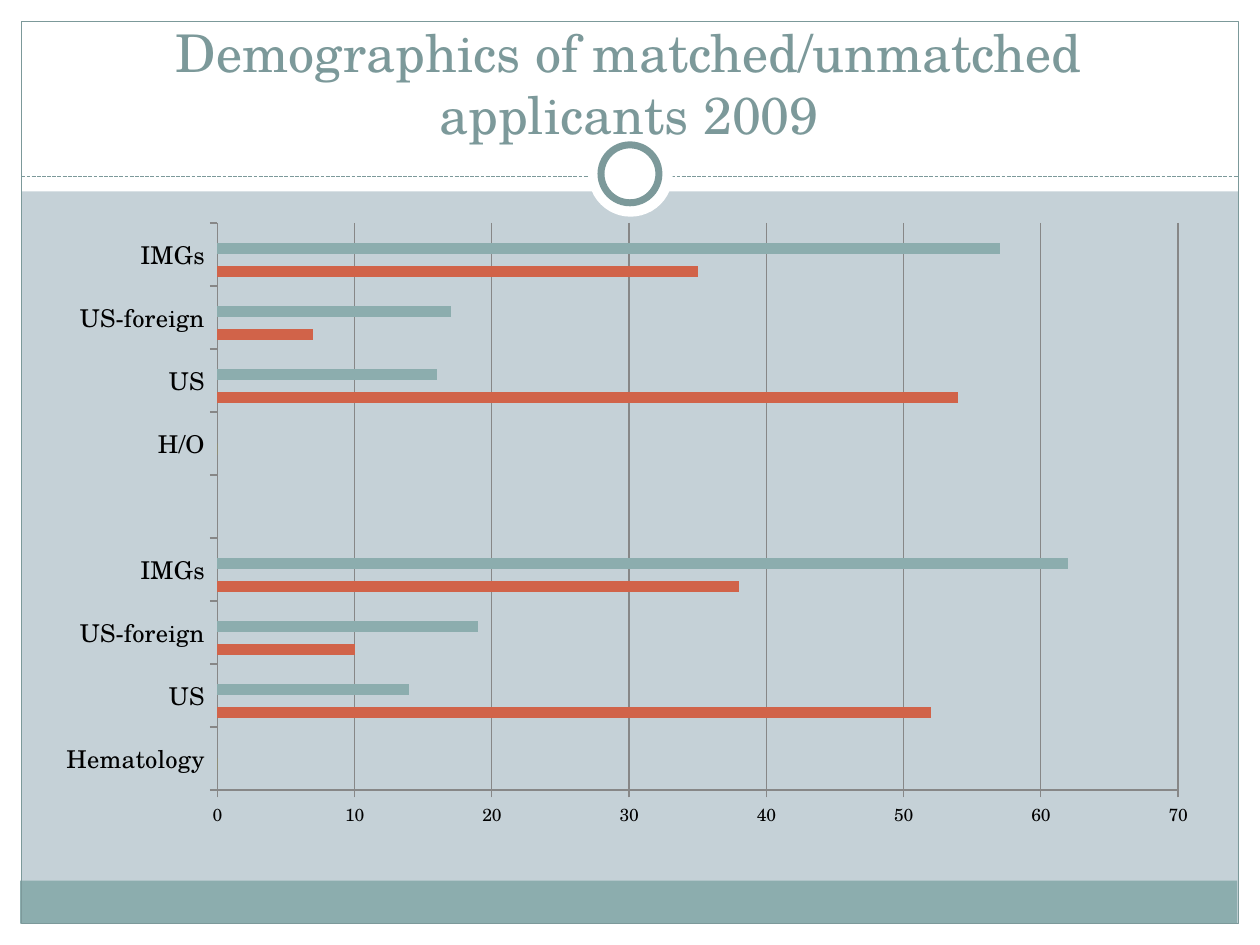
"""Build a slide with a bar chart of matched and unmatched applicants in 2009."""
from typing import NamedTuple, Optional

from lxml import etree
from pptx import Presentation
from pptx.chart.data import CategoryChartData
from pptx.dml.color import RGBColor
from pptx.enum.chart import XL_CHART_TYPE, XL_TICK_MARK
from pptx.enum.dml import MSO_LINE
from pptx.enum.shapes import MSO_CONNECTOR, MSO_SHAPE
from pptx.enum.text import MSO_ANCHOR, MSO_AUTO_SIZE, PP_ALIGN
from pptx.oxml import parse_xml
from pptx.oxml.ns import nsdecls, qn
from pptx.util import Inches, Pt

RECT, OVAL = MSO_SHAPE.RECTANGLE, MSO_SHAPE.OVAL
BAR, OUTSIDE = XL_CHART_TYPE.BAR_CLUSTERED, XL_TICK_MARK.OUTSIDE
STRAIGHT, DASH = MSO_CONNECTOR.STRAIGHT, MSO_LINE.SQUARE_DOT
CENTER, BOTTOM = PP_ALIGN.CENTER, MSO_ANCHOR.BOTTOM
NO_AUTOFIT = MSO_AUTO_SIZE.NONE
FONT = "TeX Gyre Schola"
WHITE, BLACK, SAGE, TEAL = "FFFFFF", "000000", "7C999A", "8CADAE"
BACKDROP, GRID = "C5D1D7", "878787"


class Panel(NamedTuple):
    left: float
    top: float
    width: float
    height: float
    fill: Optional[str] = WHITE
    line: Optional[str] = None
    weight: float = 0.75
    kind: int = RECT


class Series(NamedTuple):
    name: str
    color: str
    values: tuple


PANELS = (
    Panel(0, 7.33, 10, 0.17),
    Panel(0, 0, 10, 1.52),
    Panel(0, 0, 0.17, 7.5),
    Panel(9.83, 0, 0.17, 7.5),
    Panel(0.16, 6.99, 9.66, 0.34, TEAL),
    Panel(0.17, 0.17, 9.66, 7.16, None, SAGE),
)
RINGS = (
    Panel(4.67, 1.05, 0.67, 0.67, kind=OVAL),
    Panel(4.77, 1.15, 0.46, 0.46, WHITE, SAGE, 4, OVAL),
)
GROUPS = ("US", "US-foreign", "IMGs")
CATEGORIES = ("Hematology", *GROUPS, "", "H/O", *GROUPS)
SERIES = (
    Series("Series 1", "D16349", (None, 52, 10, 38, None, None, 54, 7, 35)),
    Series("Series 2", "CCB400", (0, None, None, None, None, 0, None, None, None)),
    Series("Series 3", TEAL, (None, 14, 19, 62, None, None, 16, 17, 57)),
    Series("Series 4", "8C7B70", (None,) * len(CATEGORIES)),
)
PLOT_BOX = {"x": 0.15, "y": 0.02, "w": 0.82, "h": 0.9}


def rgb(color: str) -> RGBColor:
    """Turn a hex string into a colour."""
    return RGBColor.from_string(color)


def style_font(font, *, size: float, color: str) -> None:
    """Set the face, size and colour of a font."""
    font.name, font.size = FONT, Pt(size)
    font.color.rgb = rgb(color)


def style_line(line, *, color: str, weight: float = 0.75) -> None:
    """Set the colour and weight of a line."""
    line.color.rgb = rgb(color)
    line.width = Pt(weight)


def write_text(shape, text: str, *, size: float, color: str, align, anchor) -> None:
    """Write one formatted paragraph into a shape."""
    frame = shape.text_frame
    frame.word_wrap, frame.auto_size = True, NO_AUTOFIT
    frame.vertical_anchor = anchor
    paragraph = frame.paragraphs[0]
    paragraph.alignment = align
    run = paragraph.add_run()
    run.text = text
    style_font(run.font, size=size, color=color)


def place(shape, left: float, top: float, width: float, height: float) -> None:
    """Move and size a shape, in inches."""
    shape.left, shape.top = Inches(left), Inches(top)
    shape.width, shape.height = Inches(width), Inches(height)


def draw_panel(slide, panel: Panel) -> None:
    """Draw one decorative shape."""
    shape = slide.shapes.add_shape(panel.kind, *(Inches(side) for side in panel[:4]))
    shape.shadow.inherit = False
    if panel.fill:
        shape.fill.solid()
        shape.fill.fore_color.rgb = rgb(panel.fill)
    else:
        shape.fill.background()
    if panel.line:
        style_line(shape.line, color=panel.line, weight=panel.weight)
    else:
        shape.line.fill.background()


def draw_divider(slide) -> None:
    """Draw the dashed line below the title."""
    divider = slide.shapes.add_connector(
        STRAIGHT, Inches(0.17), Inches(1.4), Inches(9.83), Inches(1.4))
    style_line(divider.line, color=SAGE)
    divider.line.dash_style = DASH
    etree.SubElement(divider.element.spPr, qn("a:effectLst"))


def fix_plot_box(chart) -> None:
    """Pin the inner plot area to fixed fractions of the chart."""
    modes = "".join(f'<c:{side}Mode val="edge"/>' for side in "xy")
    sizes = "".join(f'<c:{side} val="{part}"/>' for side, part in PLOT_BOX.items())
    plot_area = chart.element.find(".//" + qn("c:plotArea"))
    for layout in plot_area.findall(qn("c:layout")):
        plot_area.remove(layout)
    plot_area.insert(0, parse_xml(
        f'<c:layout {nsdecls("c")}><c:manualLayout><c:layoutTarget val="inner"/>'
        f"{modes}{sizes}</c:manualLayout></c:layout>"))


def draw_chart(slide) -> None:
    """Draw the clustered bar chart."""
    applicants = CategoryChartData()
    applicants.categories = CATEGORIES
    for series in SERIES:
        applicants.add_series(series.name, series.values)
    chart = slide.shapes.add_chart(
        BAR, Inches(0.33), Inches(1.67), Inches(9.3), Inches(5), applicants).chart
    chart.has_legend = chart.has_title = False
    style_font(chart.font, size=10, color=BLACK)
    bars = chart.plots[0]
    bars.gap_width, bars.overlap, bars.vary_by_categories = 150, 0, False
    for drawn, series in zip(bars.series, SERIES):
        drawn.format.fill.solid()
        drawn.format.fill.fore_color.rgb = rgb(series.color)
    for axis, size in ((chart.category_axis, 14), (chart.value_axis, 10)):
        axis.major_tick_mark = OUTSIDE
        style_line(axis.format.line, color=GRID)
        style_font(axis.tick_labels.font, size=size, color=BLACK)
    scale = chart.value_axis
    scale.minimum_scale, scale.maximum_scale, scale.major_unit = 0, 70, 10
    scale.has_major_gridlines = True
    style_line(scale.major_gridlines.format.line, color=GRID)
    fix_plot_box(chart)


def main() -> None:
    """Build and save the slide."""
    deck = Presentation()
    deck.slide_width, deck.slide_height = Inches(10), Inches(7.5)
    slide = deck.slides.add_slide(deck.slide_layouts[5])
    slide.background.fill.solid()
    slide.background.fill.fore_color.rgb = rgb(BACKDROP)
    for panel in PANELS:
        draw_panel(slide, panel)
    draw_divider(slide)
    for ring in RINGS:
        draw_panel(slide, ring)
    title = slide.shapes.title
    place(title, 0.33, 0.37, 9.33, 0.83)
    write_text(title, "Demographics of matched/unmatched applicants 2009",
               size=29.7, color=SAGE, align=CENTER, anchor=BOTTOM)
    title.element.getparent().append(title.element)
    draw_chart(slide)
    deck.save("out.pptx")


if __name__ == "__main__":
    main()
